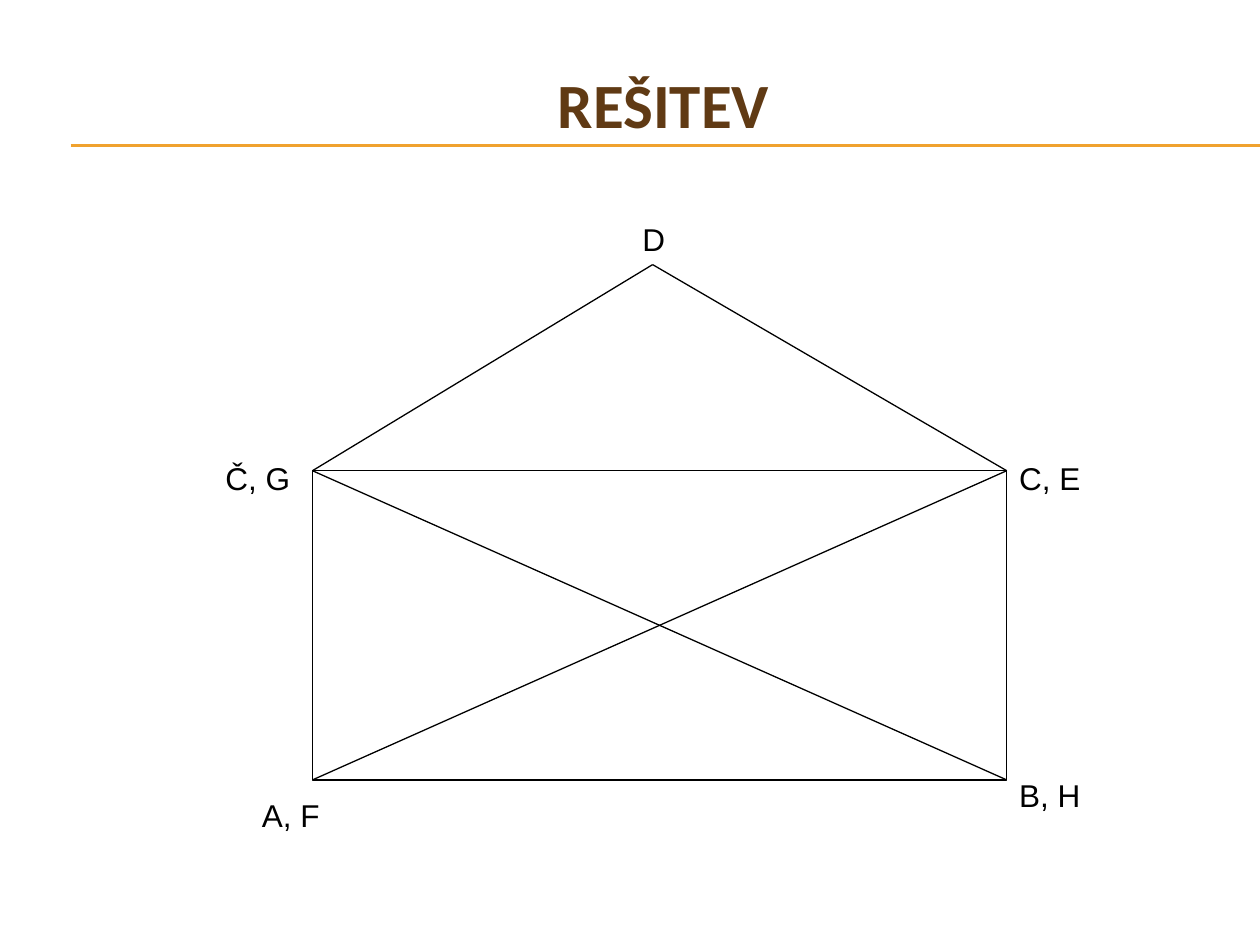
import pptx
import pptx.dml.color
import pptx.enum.shapes
import pptx.enum.text
import pptx.oxml
import pptx.util
from lxml import etree

SLIDE_W, SLIDE_H = 10, 7.5
COLORS = {"rule": "F0A22E", "title": "603A14", "ink": "000000", "paper": "FFFFFF"}
LINE_WIDTH = pptx.util.Pt(0.75)
inches = pptx.util.Inches


def rgb(name):
    return pptx.dml.color.RGBColor.from_string(COLORS[name])


def add_line(shapes, start, end, color):
    line = shapes.add_connector(
        pptx.enum.shapes.MSO_CONNECTOR.STRAIGHT, *map(inches, (*start, *end)))
    line.line.color.rgb = rgb(color)
    line.line.width = LINE_WIDTH
    etree.SubElement(line._element.spPr, pptx.oxml.ns.qn("a:effectLst"))


def add_text(shapes, box, text, font_name, size, color):
    """Add a one-paragraph text box and return its frame."""
    frame = shapes.add_textbox(*map(inches, box)).text_frame
    frame.word_wrap = True
    paragraph = frame.paragraphs[0]
    paragraph.text = text
    paragraph.font.name = font_name
    paragraph.font.size = pptx.util.Pt(size)
    paragraph.font.color.rgb = rgb(color)
    return frame


def add_heading(slide, box, title):
    """Place the centred title over a double rule that runs off the right edge."""
    left, top, width, height = box
    for share in (0.86, 0.87):
        y = top + share * height
        add_line(slide.shapes, (left + 0.31, y), (SLIDE_W, y), "rule")
    frame = add_text(slide.shapes, box, title, "Calibri", 36, "title")
    frame.margin_left = inches(0.63)
    frame.vertical_anchor = pptx.enum.text.MSO_ANCHOR.MIDDLE
    frame.paragraphs[0].alignment = pptx.enum.text.PP_ALIGN.CENTER
    frame.paragraphs[0].font.bold = True


def add_envelope(slide, box):
    """Draw the open envelope and label its five corners."""
    left, top, width, height = box
    right, bottom = left + width, top + height
    fold = top + 0.4 * height
    apex = (left + 0.49 * width, top)
    fold_left, fold_right = (left, fold), (right, fold)
    base_left, base_right = (left, bottom), (right, bottom)

    drawing = slide.shapes.add_group_shape().shapes
    body = drawing.add_shape(
        pptx.enum.shapes.MSO_SHAPE.RECTANGLE,
        *map(inches, (left, fold, width, bottom - fold)))
    body.shadow.inherit = False
    body.fill.solid()
    body.fill.fore_color.rgb = rgb("paper")
    body.line.color.rgb = rgb("ink")
    body.line.width = LINE_WIDTH

    for start, end in ((fold_left, apex), (apex, fold_right),
                       (fold_left, base_right), (fold_right, base_left)):
        add_line(drawing, start, end, "ink")

    corner_labels = (  # text, corner, offset of the label from the corner
        ("A, F", base_left, (-0.5, 0.08)),
        ("B, H", base_right, (0, -0.08)),
        ("C, E", fold_right, (0, -0.14)),
        ("Č, G", fold_left, (-0.79, -0.14)),
        ("D", apex, (-0.18, -0.4)),
    )
    for text, (x, y), (dx, dy) in corner_labels:
        add_text(slide.shapes, (x + dx, y + dy, 0.87, 0.4), text, "Arial", 18, "ink")


def main():
    deck = pptx.Presentation()
    deck.slide_width, deck.slide_height = inches(SLIDE_W), inches(SLIDE_H)
    slide = deck.slides.add_slide(deck.slide_layouts[6])
    add_heading(slide, (0.25, 0.36, 9.5, 0.92), "REŠITEV")
    add_envelope(slide, (2.48, 2.1, 5.51, 4.09))
    deck.save("out.pptx")


if __name__ == "__main__":
    main()
